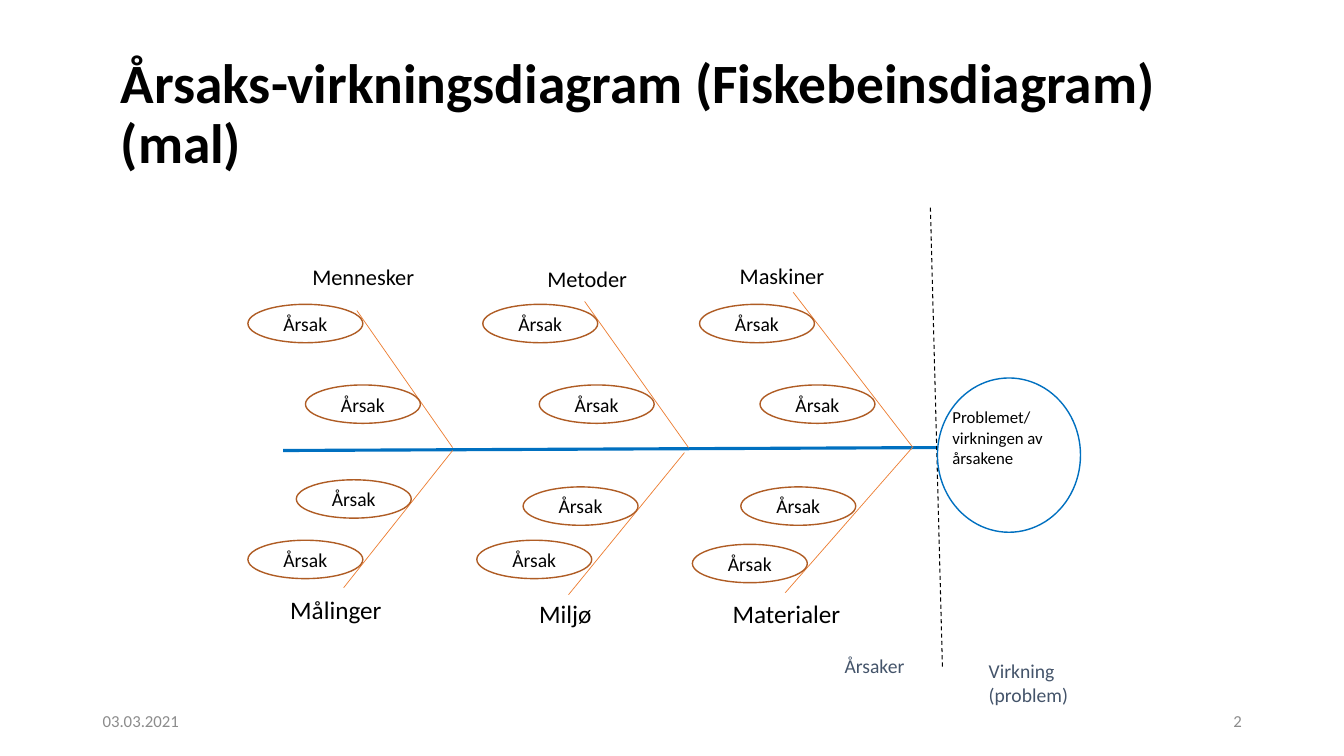
"""Build a fishbone cause-and-effect template slide."""
from dataclasses import dataclass

from lxml import etree
from pptx import Presentation
from pptx.dml.color import RGBColor
from pptx.enum.dml import MSO_LINE
from pptx.enum.shapes import MSO_CONNECTOR, MSO_SHAPE
from pptx.enum.text import MSO_ANCHOR, PP_ALIGN
from pptx.oxml.ns import qn
from pptx.util import Pt

STRAIGHT = MSO_CONNECTOR.STRAIGHT
OVAL = MSO_SHAPE.OVAL
DASH = MSO_LINE.DASH
TOP, MIDDLE = MSO_ANCHOR.TOP, MSO_ANCHOR.MIDDLE
LEFT, CENTER, RIGHT = PP_ALIGN.LEFT, PP_ALIGN.CENTER, PP_ALIGN.RIGHT

FONT = "Calibri"
BLACK, GREY, SLATE = "000000", "8C8C8C", "44546A"
BLUE, ORANGE, BROWN = "0070C0", "ED7D31", "AF5C24"
CAUSE_SIZE = (82.1, 27.4)

Point = tuple[float, float]
Box = tuple[float, float, float, float]


@dataclass(frozen=True)
class Label:
    text: str
    box: Box
    size: float
    color: str = BLACK
    bold: bool = False
    align: PP_ALIGN = LEFT
    anchor: MSO_ANCHOR = TOP
    spacing: float = 1.0


@dataclass(frozen=True)
class Bone:
    category: Label
    joint: Point
    tip: Point
    causes: tuple[Point, Point]


BONES = [
    Bone(Label("Mennesker", (216, 184.3, 111.6, 26.6), 16),
         (323.3, 319.7), (254.9, 221.8), ((177.1, 217.4), (218.2, 275))),
    Bone(Label("Metoder", (383.8, 185.8, 85, 26.6), 16),
         (491.8, 319.7), (417.6, 215.3), ((344.9, 217.4), (385.2, 275))),
    Bone(Label("Maskiner", (521.3, 183.6, 92.9, 26.6), 16),
         (651.6, 319), (566.6, 208.8), ((499.7, 217.4), (542.9, 275))),
    Bone(Label("Målinger", (200.2, 421.2, 85, 28.8), 18),
         (323.3, 321.8), (245.5, 419.8), ((211.7, 342.7), (177.1, 385.9))),
    Bone(Label("Miljø", (378, 424.1, 72, 28.8), 18),
         (488.9, 323.3), (406.1, 424.8), ((373.7, 347.8), (340.6, 385.9))),
    Bone(Label("Materialer", (516.2, 424.1, 98.6, 28.8), 18),
         (652.3, 319), (560.9, 423.4), ((529.2, 347.8), (494.6, 388.8))),
]

LABELS = [
    Label("Årsaks-virkningsdiagram (Fiskebeinsdiagram) (mal)",
          (79.2, 49.7, 825.1, 65.5), 39.6, bold=True, anchor=MIDDLE, spacing=0.9),
    Label("Årsaker", (596.2, 463.7, 84.2, 24.5), 14, SLATE),
    Label("Virkning (problem)", (699.1, 467.3, 87.8, 41), 14, SLATE),
    Label("Problemet/ virkningen av årsakene", (673.2, 287.3, 97.2, 51.1), 12),
    Label("03.03.2021", (66.2, 500.4, 216, 28.8), 12, GREY, anchor=MIDDLE),
    Label("2", (678.2, 500.4, 216, 28.8), 12, GREY, align=RIGHT, anchor=MIDDLE),
]


def rgb(color: str) -> RGBColor:
    return RGBColor.from_string(color)


def write(shape, label: Label) -> None:
    frame = shape.text_frame
    frame.word_wrap = True
    frame.vertical_anchor = label.anchor
    paragraph = frame.paragraphs[0]
    paragraph.text = label.text
    paragraph.alignment = label.align
    paragraph.line_spacing = label.spacing
    font = paragraph.font
    font.name, font.size, font.bold = FONT, Pt(label.size), label.bold
    font.color.rgb = rgb(label.color)


def add_label(slide, label: Label) -> None:
    write(slide.shapes.add_textbox(*map(Pt, label.box)), label)


def add_line(slide, start: Point, end: Point, color: str, width: float):
    connector = slide.shapes.add_connector(STRAIGHT, *map(Pt, start + end))
    connector.line.color.rgb = rgb(color)
    connector.line.width = Pt(width)
    etree.SubElement(connector._element.spPr, qn("a:effectLst"))
    return connector


def add_oval(slide, box: Box, color: str):
    oval = slide.shapes.add_shape(OVAL, *map(Pt, box))
    oval.shadow.inherit = False
    oval.fill.background()
    oval.line.color.rgb = rgb(color)
    oval.line.width = Pt(1)
    return oval


def add_bone(slide, bone: Bone) -> None:
    add_line(slide, bone.joint, bone.tip, ORANGE, 0.5)
    add_label(slide, bone.category)
    for corner in bone.causes:
        box = corner + CAUSE_SIZE
        cause = Label("Årsak", box, 14, align=CENTER, anchor=MIDDLE)
        write(add_oval(slide, box, BROWN), cause)


def main() -> None:
    deck = Presentation()
    deck.slide_width, deck.slide_height = Pt(960), Pt(540)
    slide = deck.slides.add_slide(deck.slide_layouts[6])
    add_line(slide, (202.3, 321.8), (669.6, 319.7), BLUE, 2.25)
    for bone in BONES:
        add_bone(slide, bone)
    divider = add_line(slide, (664.6, 148.3), (673.2, 477.4), BLACK, 0.75)
    divider.line.dash_style = DASH
    add_oval(slide, (669.6, 270, 102.2, 110.2), BLUE)
    for label in LABELS:
        add_label(slide, label)
    deck.save("out.pptx")


if __name__ == "__main__":
    main()
